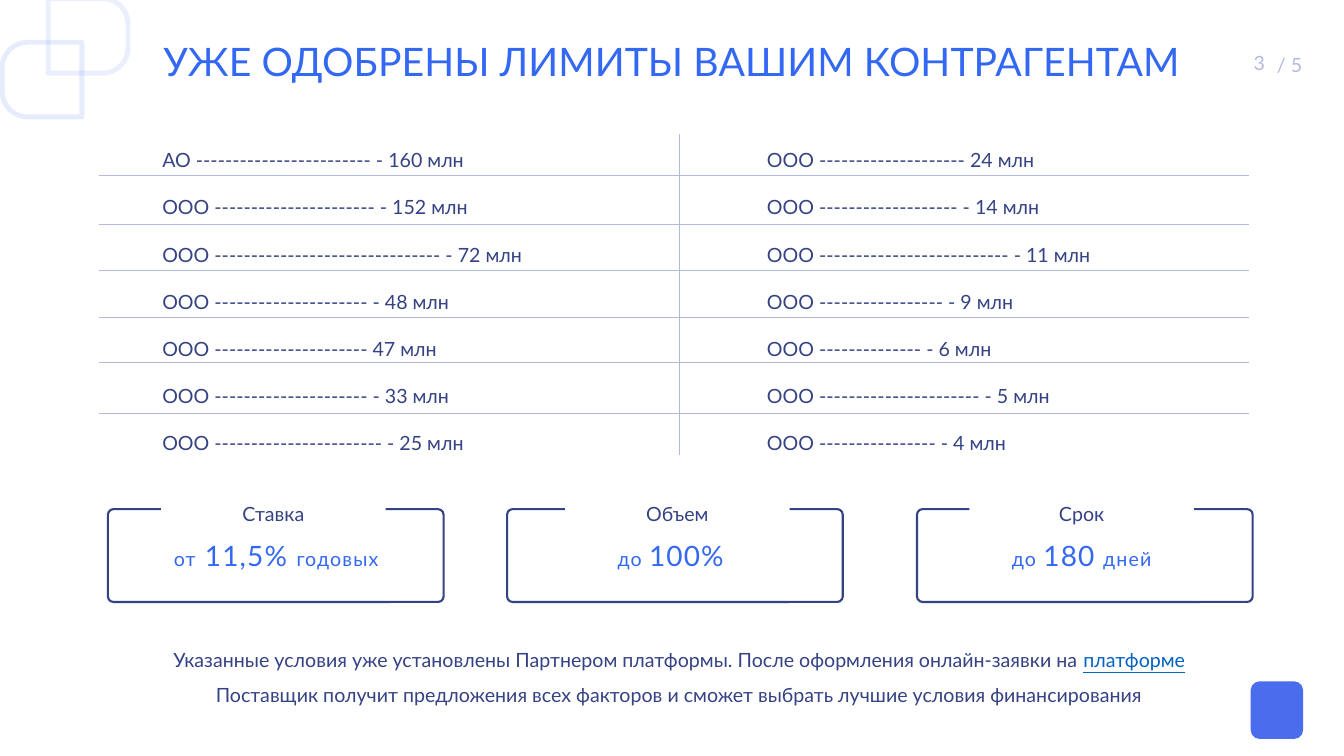
import pptx
import pptx.util
import pptx.dml.color
import pptx.enum.shapes
import pptx.enum.text
import pptx.oxml.ns
import lxml.etree

Cm, Pt = pptx.util.Cm, pptx.util.Pt
Kind = pptx.enum.shapes.MSO_SHAPE
Align, Anchor = pptx.enum.text.PP_ALIGN, pptx.enum.text.MSO_ANCHOR

COLORS = {"title": "3368F2", "value": "3368F1", "text": "354283", "rule": "B3BADB",
          "link": "0563C1", "mark": "4A6DED", "white": "FFFFFF"}

TITLE = "УЖЕ ОДОБРЕНЫ ЛИМИТЫ ВАШИМ КОНТРАГЕНТАМ"
PAGE, TOTAL = "3", "/ 5"
LISTS = [
    (3.84, ["АО ------------------------ - 160 млн",
            "ООО ---------------------- - 152 млн",
            "ООО ------------------------------- - 72 млн",
            "ООО --------------------- - 48 млн",
            "ООО --------------------- 47 млн",
            "ООО --------------------- - 33 млн",
            "ООО ----------------------- - 25 млн"]),
    (19.08, ["ООО -------------------- 24 млн",
             "ООО ------------------- - 14 млн",
             "ООО -------------------------- - 11 млн",
             "ООО ----------------- - 9 млн",
             "ООО -------------- - 6 млн",
             "ООО ---------------------- - 5 млн",
             "ООО ---------------- - 4 млн"]),
]
RULES = [4.42, 5.66, 6.81, 8.0, 9.14, 10.41]
# card left, label left, value left, label, value runs (text, size)
CARDS = [
    (2.72, 4.06, 3.56, "Ставка", [("от", 14), (" 11,5% ", 20), ("годовых", 14)]),
    (12.78, 14.24, 13.5, "Объем", [("до ", 14), ("100%", 20)]),
    (23.11, 24.43, 23.86, "Срок", [("до ", 14), ("180", 20), (" ", 18), ("дней", 14)]),
]
NOTE = [("Указанные условия уже установлены Партнером платформы. "
         "После оформления онлайн-заявки на ", {}),
        ("платформе", {"color": "link", "underline": True}),
        (" Поставщик получит предложения всех факторов и сможет "
         "выбрать лучшие условия финансирования", {})]
# left, top, turn, opacity in percent
FRAMES = [(0.12, 1.0, 270, 13), (1.28, -0.1, 90, 11)]

deck = pptx.Presentation()
deck.slide_width, deck.slide_height = Cm(33.87), Cm(19.05)
slide = deck.slides.add_slide(deck.slide_layouts[6])
shapes = slide.shapes


def rgb(name):
    return pptx.dml.color.RGBColor.from_string(COLORS[name])


def put(obj, form):
    for key, val in form.items():
        setattr(obj, key, val)


def write(shape, lines, color="text", size=14, space=0, para=None, frame=None):
    """Fill a shape with paragraphs, each a list of (text, font values)."""
    body = shape.text_frame
    put(body, {"word_wrap": True, "vertical_anchor": Anchor.TOP, **(frame or {})})
    for num, runs in enumerate(lines):
        par = body.add_paragraph() if num else body.paragraphs[0]
        put(par, para or {})
        for text, form in runs:
            form = {"name": "Lato", "size": Pt(size), **form}
            tint = form.pop("color", color)
            run = par.add_run()
            run.text = text
            put(run.font, form)
            run.font.color.rgb = rgb(tint)
            if space:
                run._r.get_or_add_rPr().set("spc", str(space))


def label(left, top, wide, high, lines, **form):
    write(shapes.add_textbox(Cm(left), Cm(top), Cm(wide), Cm(high)), lines, **form)


def block(kind, left, top, wide, high, fill=None, line=None, width=1.5):
    shape = shapes.add_shape(kind, Cm(left), Cm(top), Cm(wide), Cm(high))
    shape.shadow.inherit = False
    if fill:
        shape.fill.solid()
        shape.fill.fore_color.rgb = rgb(fill)
    else:
        shape.fill.background()
    if line:
        shape.line.color.rgb = rgb(line)
        shape.line.width = Pt(width)
    else:
        shape.line.fill.background()
    return shape


def rule(x1, y1, x2, y2):
    line = shapes.add_connector(pptx.enum.shapes.MSO_CONNECTOR.STRAIGHT,
                                Cm(x1), Cm(y1), Cm(x2), Cm(y2))
    line.line.color.rgb = rgb("rule")
    line.line.width = Pt(0.5)
    lxml.etree.SubElement(line._element.spPr, pptx.oxml.ns.qn("a:effectLst"))


for left, top, turn, clear in FRAMES:
    frame = block(Kind.ROUND_2_SAME_RECTANGLE, left, top, 1.88, 2.01, line="mark", width=3.5)
    frame.adjustments[0] = 0.34
    frame.rotation = turn
    tint = frame.line._ln.find(".//" + pptx.oxml.ns.qn("a:srgbClr"))
    lxml.etree.SubElement(tint, pptx.oxml.ns.qn("a:alpha")).set("val", str(clear * 1000))
block(Kind.ROUNDED_RECTANGLE, 31.52, 17.17, 1.32, 1.45, fill="mark")

label(31.93, 1.02, 1.9, 0.94, [[(TOTAL, {})]], color="rule", para={"line_spacing": 1.3})
label(24.51, 1.07, 7.62, 1.02, [[(PAGE, {})]], color="rule",
      para={"alignment": Align.RIGHT}, frame={"vertical_anchor": Anchor.MIDDLE})
label(0, 0.46, 33.87, 2.29, [[(TITLE, {})]], color="title", size=28, space=10,
      para={"alignment": Align.CENTER, "line_spacing": 0.9},
      frame={"vertical_anchor": Anchor.MIDDLE})

for left, rows in LISTS:
    label(left, 3.02, 13.28, 8.64, [[(row, {})] for row in rows], para={"line_spacing": 2.0})
for top in RULES:
    rule(2.49, top, 31.47, top)
rule(17.12, 3.38, 17.12, 11.46)

for left, name_x, sum_x, name, value in CARDS:
    card = block(Kind.ROUNDED_RECTANGLE, left, 12.83, 8.46, 2.34, "white", "text")
    card.adjustments[0] = 0.06
    plate = block(Kind.RECTANGLE, name_x, 12.52, 5.66, 0.86, "white")
    write(plate, [[(name, {})]], para={"alignment": Align.CENTER})
    label(sum_x, 13.54, 6.8, 0.89, [[(text, {"size": Pt(size)}) for text, size in value]],
          color="value", space=80, para={"alignment": Align.CENTER},
          frame={"vertical_anchor": Anchor.MIDDLE, "margin_left": 0, "margin_right": 0,
                 "margin_top": Cm(0.03), "margin_bottom": 0})

label(3.15, 15.9, 27.94, 1.93, [NOTE], para={"alignment": Align.CENTER, "line_spacing": 1.5})

deck.save("out.pptx")
